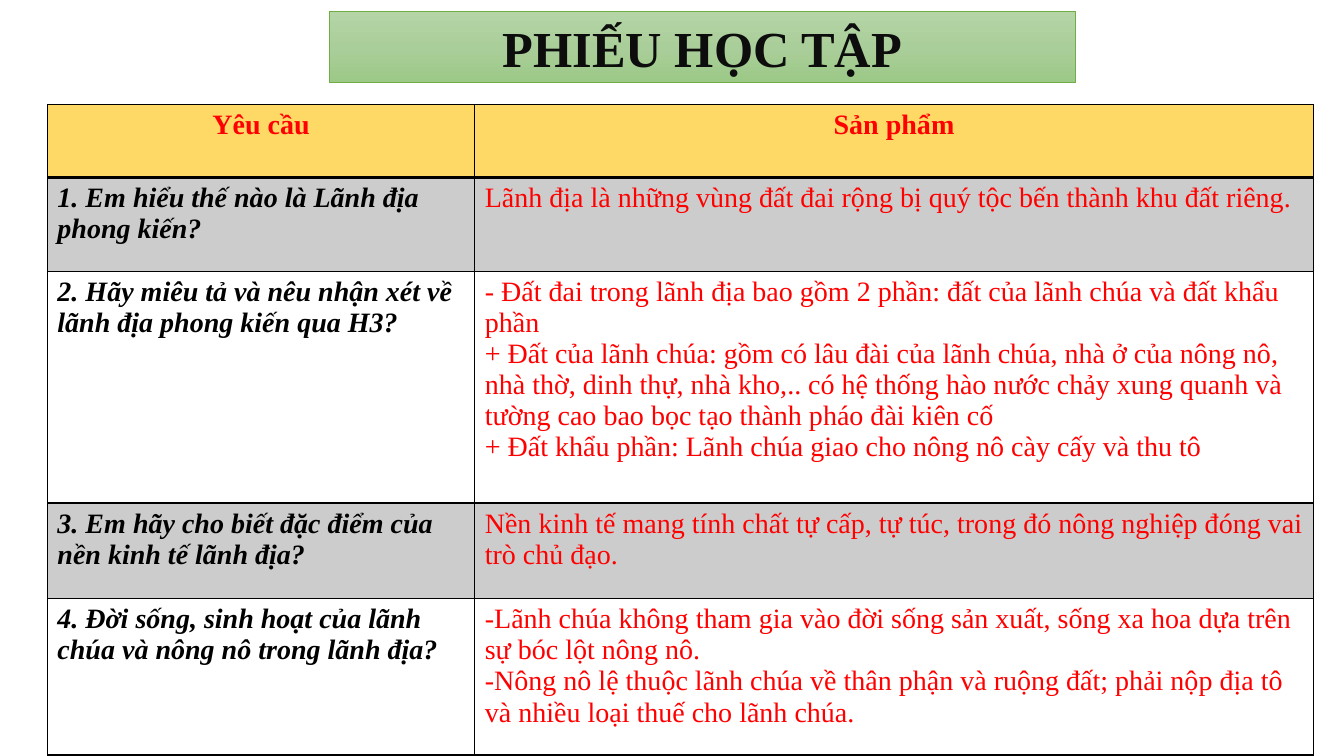
"""Build the study worksheet slide with its title banner and answer table."""
import copy
from dataclasses import dataclass

import lxml.etree
import pptx
import pptx.dml.color
import pptx.enum.shapes
import pptx.enum.text
import pptx.oxml
import pptx.oxml.ns
import pptx.util

Pt = pptx.util.Pt
RGB = pptx.dml.color.RGBColor.from_string
qn = pptx.oxml.ns.qn
CENTER = pptx.enum.text.PP_ALIGN.CENTER
LEFT = pptx.enum.text.PP_ALIGN.LEFT


@dataclass(frozen=True)
class Theme:
    font: str = "Times New Roman"
    title_size: float = 36
    body_size: float = 20
    title: str = "0D0D0D"
    ink: str = "000000"
    answer: str = "FF0000"
    header: str = "FFD966"
    banner: tuple[str, ...] = ("B5D5A7", "AACE9A", "9CC987")
    banner_line: str = "70AD47"
    band_alpha: int = 20


@dataclass(frozen=True)
class Row:
    height: float
    request: str
    answers: tuple[str, ...]


THEME = Theme()
COLUMNS = (305.28, 599.04)
HEADER = Row(51.84, "Yêu cầu", ("Sản phẩm",))
ROWS = (
    Row(66.96, "1. Em hiểu thế nào là Lãnh địa phong kiến?",
        ("Lãnh địa là những vùng đất đai rộng bị quý tộc bến thành khu đất riêng.",)),
    Row(165.6, "2. Hãy miêu tả và nêu nhận xét về lãnh địa phong kiến qua H3?",
        ("- Đất đai trong lãnh địa bao gồm 2 phần: đất của lãnh chúa và đất khẩu phần",
         "+ Đất của lãnh chúa: gồm có lâu đài của lãnh chúa, nhà ở của nông nô, "
         "nhà thờ, dinh thự, nhà kho,.. có hệ thống hào nước chảy xung quanh và "
         "tường cao bao bọc tạo thành pháo đài kiên cố",
         "+ Đất khẩu phần: Lãnh chúa giao cho nông nô cày cấy và thu tô")),
    Row(68.4, "3. Em hãy cho biết đặc điểm của nền kinh tế lãnh địa?",
        ("Nền kinh tế mang tính chất tự cấp, tự túc, trong đó nông nghiệp đóng vai "
         "trò chủ đạo.",)),
    Row(111.6, "4. Đời sống, sinh hoạt của lãnh chúa và nông nô trong lãnh địa?",
        ("-Lãnh chúa không tham gia vào đời sống sản xuất, sống xa hoa dựa trên "
         "sự bóc lột nông nô.",
         "-Nông nô lệ thuộc lãnh chúa về thân phận và ruộng đất; phải nộp địa tô "
         "và nhiều loại thuế cho lãnh chúa.")),
)


def write(tf, *lines: str, color: str, size: float = THEME.body_size,
          bold: bool = False, italic: bool = False, align=LEFT) -> None:
    """Fill a text frame with one formatted paragraph per line."""
    for i, line in enumerate(lines):
        p = tf.add_paragraph() if i else tf.paragraphs[0]
        p.alignment = align
        r = p.add_run()
        r.text = line
        r.font.name, r.font.size = THEME.font, Pt(size)
        r.font.bold, r.font.italic = bold, italic
        r.font.color.rgb = RGB(color)


def add_banner(slide) -> None:
    """Draw the gradient title banner."""
    s = slide.shapes.add_shape(pptx.enum.shapes.MSO_SHAPE.RECTANGLE,
                               Pt(235.44), Pt(7.92), Pt(532.8), Pt(51.12))
    s.shadow.inherit = False
    s.line.color.rgb = RGB(THEME.banner_line)
    s.line.width = Pt(0.5)
    s.fill.gradient()
    s.fill.gradient_angle = 270
    first = next(s._element.iter(qn("a:gs")))
    first.addnext(copy.deepcopy(first))
    for i, (stop, color) in enumerate(zip(s.fill.gradient_stops, THEME.banner)):
        stop.position = i / 2
        stop.color.rgb = RGB(color)
    s.text_frame.word_wrap = True
    write(s.text_frame, "PHIẾU HỌC TẬP", color=THEME.title,
          size=THEME.title_size, bold=True, align=CENTER)


def set_borders(cell, top: float, bottom: float) -> None:
    """Outline a cell, with its own top and bottom widths in points."""
    tc_pr = cell._tc.get_or_add_tcPr()
    widths = {"lnL": 1, "lnR": 1, "lnT": top, "lnB": bottom}
    for i, (side, width) in enumerate(widths.items()):
        ln = pptx.oxml.parse_xml(
            f'<a:{side} {pptx.oxml.ns.nsdecls("a")} w="{Pt(width)}">'
            f'<a:solidFill><a:srgbClr val="{THEME.ink}"/></a:solidFill></a:{side}>')
        tc_pr.insert(i, ln)


def fill_cell(cell, row: int) -> None:
    """Colour a cell by its row: header, shaded band or clear."""
    if row and row % 2 == 0:
        cell.fill.background()
        return
    cell.fill.solid()
    cell.fill.fore_color.rgb = RGB(THEME.ink if row else THEME.header)
    if row:
        color = cell._tc.tcPr.find(f'{qn("a:solidFill")}/{qn("a:srgbClr")}')
        lxml.etree.SubElement(color, qn("a:alpha"), val=str(THEME.band_alpha * 1000))


def add_answers(slide) -> None:
    """Draw the table of requests and answers."""
    rows = (HEADER, *ROWS)
    table = slide.shapes.add_table(
        len(rows), len(COLUMNS), Pt(33.84), Pt(74.88),
        Pt(sum(COLUMNS)), Pt(sum(row.height for row in rows))).table
    table.horz_banding = False
    for column, width in zip(table.columns, COLUMNS):
        column.width = Pt(width)
    for i, row in enumerate(rows):
        table.rows[i].height = Pt(row.height)
        request, answer = table.rows[i].cells
        for cell in (request, answer):
            fill_cell(cell, i)
            set_borders(cell, top=2 if i == 1 else 1, bottom=1 if i else 2)
        align = LEFT if i else CENTER
        write(request.text_frame, row.request, bold=True, italic=i > 0,
              color=THEME.ink if i else THEME.answer, align=align)
        write(answer.text_frame, *row.answers, bold=i == 0,
              color=THEME.answer, align=align)


def main() -> None:
    """Create and save the presentation."""
    prs = pptx.Presentation()
    prs.slide_width, prs.slide_height = Pt(960), Pt(540)
    slide = prs.slides.add_slide(prs.slide_layouts[6])
    add_banner(slide)
    add_answers(slide)
    prs.save("out.pptx")


if __name__ == "__main__":
    main()
